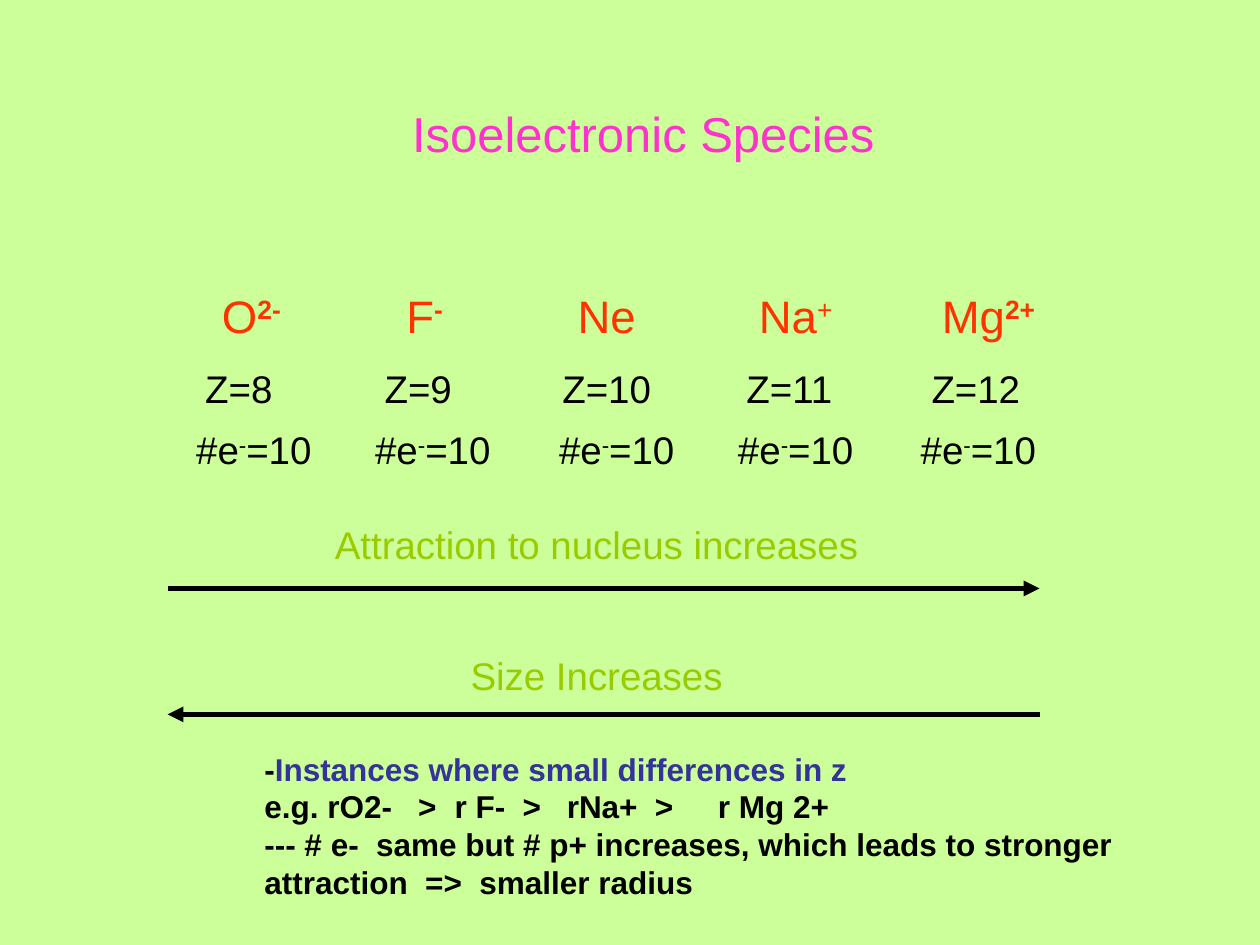
"""Build the slide on isoelectronic species and their trends."""
from dataclasses import dataclass

from lxml.etree import SubElement
from pptx import Presentation
from pptx.dml.color import RGBColor
from pptx.enum.shapes import MSO_CONNECTOR as Connector
from pptx.enum.text import MSO_ANCHOR as Anchor, MSO_AUTO_SIZE as AutoSize, PP_ALIGN as Align
from pptx.oxml.ns import qn
from pptx.util import Inches, Pt


@dataclass(frozen=True)
class Theme:
    font: str = "Arial"
    background: str = "CCFF99"
    title: str = "FF33CC"
    symbol: str = "FF3300"
    trend: str = "99CC00"
    highlight: str = "333399"
    ink: str = "000000"
    title_size: int = 28
    symbol_size: int = 26
    body_size: int = 22
    note_size: int = 18
    arrow_width: int = 3


@dataclass(frozen=True)
class Piece:
    text: str
    size: int
    color: str
    bold: bool = False
    superscript: bool = False


@dataclass(frozen=True)
class Line:
    pieces: tuple[Piece, ...]
    align: Align = Align.CENTER
    spacing: float | None = None
    indent: float = 0
    tabs: tuple[float, ...] = ()


@dataclass(frozen=True)
class Species:
    symbol: str
    charge: str
    protons: int
    left: float
    width: float
    electrons_left: float
    indent: float = 0
    bold_charge: bool = True


@dataclass(frozen=True)
class Trend:
    label: str
    left: float
    top: float
    width: float
    arrow_top: float
    arrow_end: str


THEME = Theme()
SPECIES = (
    Species("O", "2-", 8, 1.45, 0.89, 1.45, 0.2),
    Species("F", "-", 9, 2.95, 0.74, 2.87, 0.1),
    Species("Ne", "", 10, 4.36, 0.91, 4.33),
    Species("Na", "+", 11, 5.81, 0.91, 5.75, 0.1, False),
    Species("Mg", "2+", 12, 7.16, 1.17, 7.2, 0.2),
)
TRENDS = (
    Trend("Attraction to nucleus increases", 2.55, 4.08, 4.37, 4.67, "a:tailEnd"),
    Trend("Size Increases", 3.63, 5.12, 2.21, 5.67, "a:headEnd"),
)
ARROW_LEFT, ARROW_RIGHT = 1.33, 8.25


def set_attributes(target, values: dict) -> None:
    """Set every named attribute on the target."""
    for name, value in values.items():
        setattr(target, name, value)


def write_line(paragraph, line: Line) -> None:
    """Write the pieces of a line into a paragraph."""
    set_attributes(paragraph, {"alignment": line.align, "line_spacing": line.spacing})
    properties = paragraph._p.get_or_add_pPr()
    if line.indent:
        properties.set("marL", str(Inches(line.indent)))
        properties.set("indent", "0")
    if line.tabs:
        tab_list = SubElement(properties, qn("a:tabLst"))
        for stop in line.tabs:
            SubElement(tab_list, qn("a:tab"), pos=str(Inches(stop)), algn="l")
    for piece in line.pieces:
        run = paragraph.add_run()
        run.text = piece.text
        set_attributes(run.font, {"name": THEME.font, "size": Pt(piece.size), "bold": piece.bold})
        run.font.color.rgb = RGBColor.from_string(piece.color)
        if piece.superscript:
            run._r.get_or_add_rPr().set("baseline", "30000")


def fill_text(shape, lines: tuple[Line, ...], wrap: bool = False, anchor: Anchor = Anchor.MIDDLE) -> None:
    """Format the text frame of a shape and write its lines."""
    frame = shape.text_frame
    set_attributes(frame, {
        "word_wrap": wrap, "vertical_anchor": anchor, "auto_size": AutoSize.SHAPE_TO_FIT_TEXT,
    })
    for index, line in enumerate(lines):
        write_line(frame.add_paragraph() if index else frame.paragraphs[0], line)


def add_text(shapes, left: float, top: float, width: float, height: float, *lines: Line, **options) -> None:
    """Add a text box at a place given in inches."""
    box = shapes.add_textbox(Inches(left), Inches(top), Inches(width), Inches(height))
    fill_text(box, lines, **options)


def add_title(slide) -> None:
    """Place and fill the title placeholder."""
    shape = slide.shapes.title
    set_attributes(shape, {
        "left": Inches(3.17), "top": Inches(0.77), "width": Inches(3.88), "height": Inches(0.57),
    })
    piece = Piece("Isoelectronic Species", THEME.title_size, THEME.title)
    fill_text(shape, (Line((piece,), Align.LEFT),))


def add_species(shapes, species: Species) -> None:
    """Add the symbol, atomic number and electron count of one species."""
    symbol = [Piece(species.symbol, THEME.symbol_size, THEME.symbol)]
    if species.charge:
        symbol.append(Piece(species.charge, THEME.symbol_size, THEME.symbol, species.bold_charge, True))
    number = Piece(f"Z={species.protons}", THEME.body_size, THEME.ink)
    add_text(shapes, species.left, 2.23, species.width, 1.09,
             Line(tuple(symbol), indent=species.indent), Line((number,), spacing=1.5))
    electrons = tuple(
        Piece(text, THEME.body_size, THEME.ink, superscript=text == "-") for text in ("#e", "-", "=10")
    )
    add_text(shapes, species.electrons_left, 3.33, 1.13, 0.47, Line(electrons))


def add_trend(shapes, trend: Trend) -> None:
    """Add a grouped arrow with its label."""
    group = shapes.add_group_shape()
    height = Inches(trend.arrow_top)
    arrow = group.shapes.add_connector(
        Connector.STRAIGHT, Inches(ARROW_LEFT), height, Inches(ARROW_RIGHT), height)
    arrow.line.width = Pt(THEME.arrow_width)
    arrow.line.color.rgb = RGBColor.from_string(THEME.ink)
    SubElement(arrow.line._get_or_add_ln(), qn(trend.arrow_end), type="triangle")
    SubElement(arrow._element.spPr, qn("a:effectLst"))
    label = Piece(trend.label, THEME.body_size, THEME.trend)
    add_text(group.shapes, trend.left, trend.top, trend.width, 0.47, Line((label,)))


def add_notes_box(shapes) -> None:
    """Add the explanation below the arrows."""
    def note(text: str, color: str = THEME.ink) -> Piece:
        """Make a bold piece of explanation."""
        return Piece(text, THEME.note_size, color, bold=True)

    add_text(
        shapes, 2, 5.9, 8, 1.3,
        Line((note("-"), note("Instances where small differences in z", THEME.highlight)), Align.LEFT),
        Line((note("e.g. rO2-\t>\tr F-\t>\trNa+\t>\tr Mg 2+"),), Align.LEFT,
             tabs=(1.22, 1.51, 2.05, 2.4, 3.1, 3.6)),
        Line((note("--- # e-  same but # p+ increases, which leads to stronger "
                   "attraction  =>  smaller radius"),), Align.LEFT),
        wrap=True, anchor=Anchor.TOP)


def main() -> None:
    """Build and save the presentation."""
    presentation = Presentation()
    set_attributes(presentation, {"slide_width": Inches(10), "slide_height": Inches(7.5)})
    slide = presentation.slides.add_slide(presentation.slide_layouts[5])
    fill = slide.background.fill
    fill.solid()
    fill.fore_color.rgb = RGBColor.from_string(THEME.background)
    add_title(slide)
    for species in SPECIES:
        add_species(slide.shapes, species)
    for trend in TRENDS:
        add_trend(slide.shapes, trend)
    add_notes_box(slide.shapes)
    presentation.save("out.pptx")


if __name__ == "__main__":
    main()
